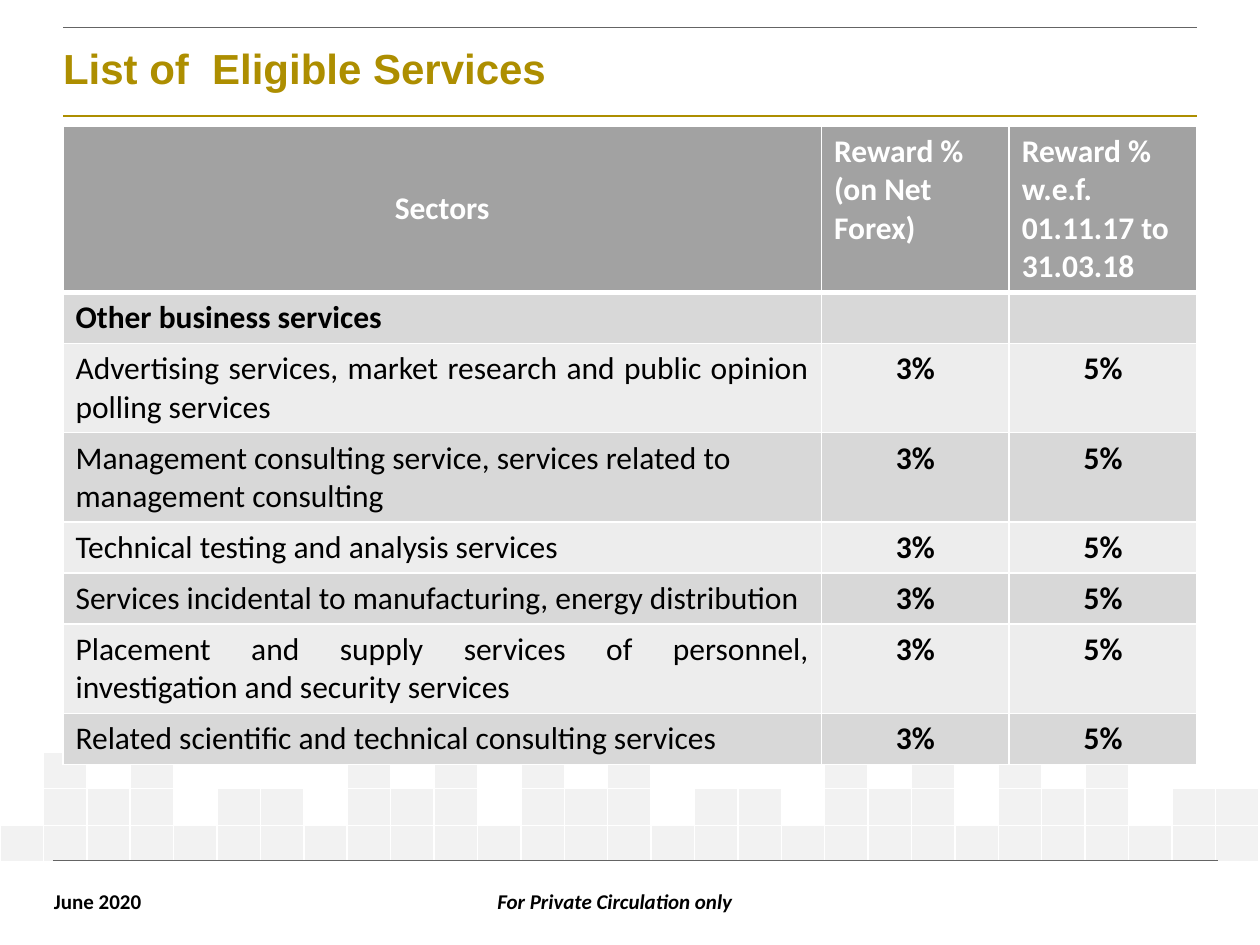
from lxml import etree
from pptx import Presentation
from pptx import util as u
from pptx.dml.color import RGBColor
from pptx.enum import shapes, text
from pptx.oxml.ns import qn

COLORS = {"gold": "AD8E00", "rule": "646464", "black": "000000", "white": "FFFFFF",
          "head": "A2A2A2", "dark": "D8D8D8", "light": "EDEDED", "tile": "F2F2F2"}
LEFT, CENTER, JUSTIFY = text.PP_ALIGN.LEFT, text.PP_ALIGN.CENTER, text.PP_ALIGN.JUSTIFY
MIDDLE, TOP = text.MSO_ANCHOR.MIDDLE, text.MSO_ANCHOR.TOP
BOLD = {"name": "Calibri", "size": u.Pt(18), "bold": True}
PLAIN = {**BOLD, "bold": False}
FOOT = {**BOLD, "size": u.Pt(12)}
PADDING = (1, 0.5, 1, 0.5)

HEADS = [("Sectors", CENTER, MIDDLE), ("Reward % (on Net Forex)", LEFT, TOP),
         ("Reward % w.e.f. 01.11.17 to 31.03.18", LEFT, TOP)]
SERVICES = [
    ("Advertising services, market research and public opinion polling services", JUSTIFY, 2),
    ("Management consulting service, services related to management consulting", LEFT, 2),
    ("Technical testing and analysis services", LEFT, 1),
    ("Services incidental to manufacturing, energy distribution", LEFT, 1),
    ("Placement and supply services of personnel, investigation and security services", JUSTIFY, 2),
    ("Related scientific and technical consulting services", JUSTIFY, 1),
]


class Deck:
    """Holds the style and the current slide, on a grid of 100 columns by 75 rows."""

    def __init__(self):
        self.prs = Presentation()
        self.prs.slide_width, self.prs.slide_height = u.Inches(10), u.Inches(7.5)
        self.s = self.prs.slides.add_slide(self.prs.slide_layouts[5])

    def grid(self, *lengths):
        return [round(n * self.prs.slide_width / 100) for n in lengths]

    def color(self, key):
        return RGBColor.from_string(COLORS[key])

    def fill_text(self, tf, words, fmt, color, align=LEFT):
        p = tf.paragraphs[0]
        p.alignment = align
        r = p.add_run()
        r.text = words
        for key, value in fmt.items():
            setattr(r.font, key, value)
        r.font.color.rgb = self.color(color)
        return p

    def inset(self, item, margins):
        for side, value in zip(("left", "top", "right", "bottom"), self.grid(*margins)):
            setattr(item, f"margin_{side}", value)

    def title(self, box, words):
        sp = self.s.shapes.title
        sp.left, sp.top, sp.width, sp.height = self.grid(*box)
        tf = sp.text_frame
        tf.vertical_anchor, tf.word_wrap = MIDDLE, True
        tf.auto_size = text.MSO_AUTO_SIZE.NONE
        self.inset(tf, (0, 0.4, 0, 0))
        fmt = {"name": "Arial", "size": u.Pt(24), "bold": True}
        self.fill_text(tf, words, fmt, "gold").line_spacing = 0.85

    def label(self, box, words, fmt, align=LEFT, wrap=True):
        tf = self.s.shapes.add_textbox(*self.grid(*box)).text_frame
        tf.word_wrap, tf.auto_size = wrap, text.MSO_AUTO_SIZE.SHAPE_TO_FIT_TEXT
        self.inset(tf, PADDING)
        self.fill_text(tf, words, fmt, "black", align)

    def rule(self, x1, x2, y, color, weight):
        c = self.s.shapes.add_connector(shapes.MSO_CONNECTOR.STRAIGHT, *self.grid(x1, y, x2, y))
        c.line.color.rgb, c.line.width = self.color(color), u.Pt(weight)
        etree.SubElement(c._element.spPr, qn("a:effectLst"))

    def table(self, x, y, cols, rows):
        tbl = self.s.shapes.add_table(len(rows), len(cols),
                                      *self.grid(x, y, sum(cols), sum(rows))).table
        for items, sizes, side in ((tbl.columns, cols, "width"), (tbl.rows, rows, "height")):
            for item, size in zip(items, self.grid(*sizes)):
                setattr(item, side, size)
        return tbl

    def cell(self, cell, fill=None, bottom=1, margins=PADDING):
        self.inset(cell, margins)
        tc_pr = cell._tc.get_or_add_tcPr()
        for edge, weight in (("L", 1), ("R", 1), ("T", 1), ("B", bottom)):
            ln = etree.SubElement(tc_pr, qn(f"a:ln{edge}"), w=str(u.Pt(weight)))
            solid = etree.SubElement(ln, qn("a:solidFill"))
            etree.SubElement(solid, qn("a:srgbClr"), val=COLORS["white"])
        if fill:
            cell.fill.solid()
            cell.fill.fore_color.rgb = self.color(fill)
        else:
            cell.fill.background()

    def skyline(self, y, height, columns):
        tbl = self.table(0, y, [100 / columns] * columns, [height] * 3)
        tops = [(1, 3, 8, 10), (1, 2, 3, 5, 6, 8, 9, 10), range(11)]
        for i, tiles in enumerate(tops):
            for j in range(columns):
                cell = tbl.cell(i, j)
                self.cell(cell, "tile" if j % 11 in tiles else None, margins=(0, 0, 0, 0))
                p = cell.text_frame.paragraphs[0]
                etree.SubElement(p._p, qn("a:endParaRPr"), sz="600")

    def services(self, x, y, cols):
        lines = [4, 1] + [n for _, _, n in SERVICES]
        tbl = self.table(x, y, cols, [1 + 3.05 * n for n in lines])
        for j, (words, align, anchor) in enumerate(HEADS):
            cell = tbl.cell(0, j)
            self.cell(cell, "head", bottom=3)
            cell.vertical_anchor = anchor
            self.fill_text(cell.text_frame, words, BOLD, "white", align)
        body = [[("Other business services", BOLD, JUSTIFY)]]
        body += [[(words, PLAIN, align), ("3%", BOLD, CENTER), ("5%", BOLD, CENTER)]
                 for words, align, _ in SERVICES]
        for i, row in enumerate(body, 1):
            for j in range(len(cols)):
                self.cell(tbl.cell(i, j), "dark" if i % 2 else "light")
            for j, (words, fmt, align) in enumerate(row):
                self.fill_text(tbl.cell(i, j).text_frame, words, fmt, "black", align)


def main():
    deck = Deck()
    deck.skyline(59.7, 2.9, 29)
    deck.rule(5, 95, 9.2, "gold", 1.5)
    deck.rule(5, 95, 2.2, "rule", 0.5)
    deck.rule(4.2, 96.7, 68.3, "rule", 0.25)
    deck.label((3.3, 70, 9.1, 3), "June 2020", FOOT, wrap=False)
    deck.label((24.2, 70, 49.2, 3), "For Private Circulation only", {**FOOT, "italic": True}, CENTER)
    deck.title((5, 2.2, 90, 6.6), "List of  Eligible Services")
    deck.services(5, 10, [60.2, 14.9, 14.9])
    deck.prs.save("out.pptx")


if __name__ == "__main__":
    main()
